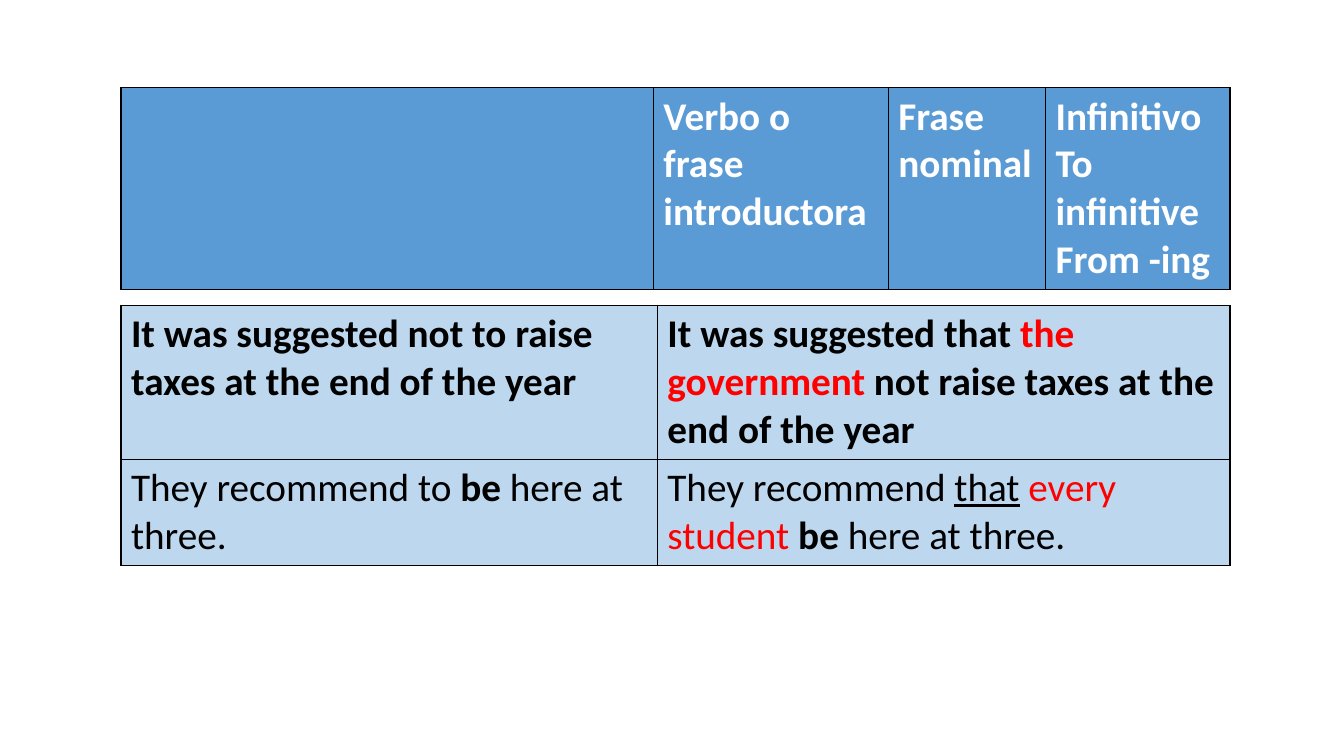
from lxml.etree import SubElement
from pptx import Presentation
from pptx.dml.color import RGBColor
from pptx.oxml.ns import qn
from pptx.util import Inches, Pt


class Theme:
    font = "Calibri"
    size = Pt(28)
    rule = Pt(1)
    line = "000000"
    head = RGBColor.from_string("5B9BD5")
    body = RGBColor.from_string("BDD7EE")
    white = RGBColor.from_string("FFFFFF")
    black = RGBColor.from_string("000000")
    red = RGBColor.from_string("FF0000")


def style_cell(cell, fill, paras, ink):
    """Border and fill a cell, then write its runs; marks are b, u and r (red)."""
    props = cell._tc.get_or_add_tcPr()
    for side in ("lnL", "lnR", "lnT", "lnB"):
        edge = SubElement(props, qn(f"a:{side}"), w=str(Theme.rule))
        paint = SubElement(edge, qn("a:solidFill"))
        SubElement(paint, qn("a:srgbClr"), val=Theme.line)
    cell.fill.solid()
    cell.fill.fore_color.rgb = fill
    frame = cell.text_frame
    for i, runs in enumerate(paras):
        para = frame.paragraphs[0] if i == 0 else frame.add_paragraph()
        for text, marks in runs:
            run = para.add_run()
            run.text = text
            font = run.font
            font.name, font.size = Theme.font, Theme.size
            font.bold = "b" in marks
            font.underline = "u" in marks
            font.color.rgb = Theme.red if "r" in marks else ink


def add_grid(slide, top, widths, heights, rows, fill, ink):
    frame = slide.shapes.add_table(
        len(heights), len(widths), Inches(1.2), Inches(top),
        Inches(sum(widths)), Inches(sum(heights)))
    table = frame.table
    table.first_row = table.horz_banding = False
    for col, width in zip(table.columns, widths):
        col.width = Inches(width)
    for row, height, texts in zip(table.rows, heights, rows):
        row.height = Inches(height)
        for cell, paras in zip(row.cells, texts):
            style_cell(cell, fill, paras, ink)


deck = Presentation()
deck.slide_width, deck.slide_height = Inches(13.33), Inches(7.5)
slide = deck.slides.add_slide(deck.slide_layouts[6])

heads = [[
    [],
    [[("Verbo o frase introductora", "b")]],
    [[("Frase nominal", "b")]],
    [[("Infinitivo", "b")], [("To infinitive", "b")], [("From -ing", "b")]],
]]
add_grid(slide, 0.87, [5.28, 2.33, 1.56, 1.83], [1.97], heads,
         Theme.head, Theme.white)

samples = [
    [
        [[("It was suggested not to raise taxes at the end of the year", "b")]],
        [[("It was suggested that ", "b"), ("the government ", "br"),
          ("not raise taxes at the end of the year", "b")]],
    ],
    [
        [[("They recommend to ", ""), ("be", "b"), (" here at three.", "")]],
        [[("They recommend ", ""), ("that", "u"), (" ", ""),
          ("every student ", "r"), ("be", "b"), (" here at three.", "")]],
    ],
]
add_grid(slide, 3.03, [5.32, 5.68], [1.5, 1.03], samples,
         Theme.body, Theme.black)

deck.save("out.pptx")
